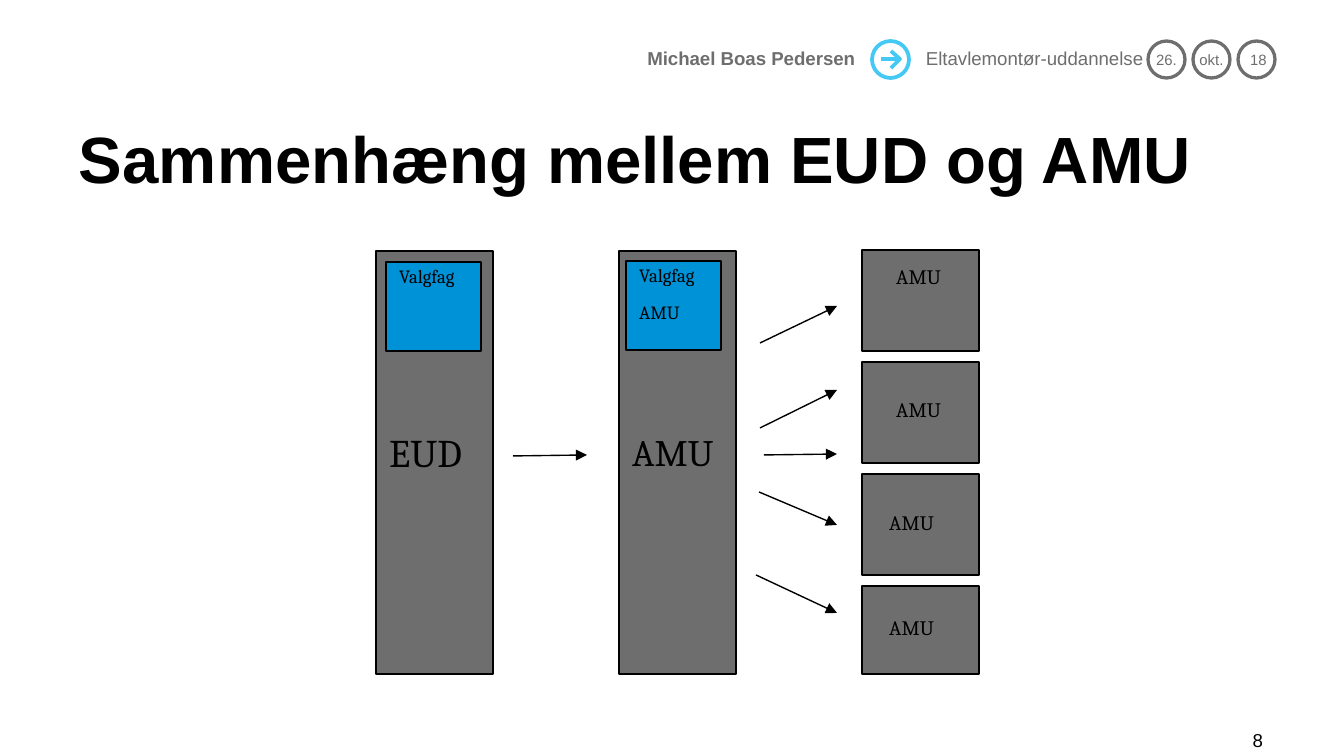
from dataclasses import dataclass

from pptx import Presentation
from pptx.dml.color import RGBColor
from pptx.enum.shapes import MSO_CONNECTOR, MSO_SHAPE
from pptx.enum.text import MSO_ANCHOR, MSO_AUTO_SIZE, PP_ALIGN
from pptx.oxml import parse_xml
from pptx.oxml.ns import nsdecls
from pptx.util import Pt

SCALE = 914400 / 134.4


@dataclass(frozen=True)
class Theme:
    """Colours, fonts and type sizes of the slide."""
    black: str = "000000"
    grey: str = "6E6E6E"
    blue: str = "0092D7"
    cyan: str = "44C8F4"
    sans: str = "Arial"
    serif: str = "Cambria"
    title: int = 35
    title_leading: int = 33
    stage: int = 20
    first_stage: int = 21
    course: int = 11
    small: int = 10
    date: int = 8
    outline: float = 0.75
    ring: float = 1.75
    icon: float = 2
    tight: float = 0.83


def emu(px):
    """Turn px into EMU."""
    return round(px * SCALE)


def assign(target, values):
    """Set every attribute named in values on target."""
    for name, value in values.items():
        setattr(target, name, value)


class Deck:
    """Holds the theme and the current slide and draws its elements."""

    def __init__(self, theme, slide):
        """Keep the theme and the slide."""
        self.theme = theme
        self.slide = slide

    def fill_text(self, frame, lines, size, family=None, color=None, bold=False,
                  align=PP_ALIGN.LEFT, anchor=MSO_ANCHOR.TOP, inset=None,
                  wrap=True, leading=None, gap=0):
        """Fill a text frame with one paragraph per line."""
        assign(frame, dict(word_wrap=wrap, auto_size=MSO_AUTO_SIZE.NONE,
                           vertical_anchor=anchor))
        if inset is not None:
            sides = ("margin_left", "margin_top", "margin_right", "margin_bottom")
            assign(frame, dict(zip(sides, map(emu, inset))))
        for index, line in enumerate(lines):
            paragraph = frame.add_paragraph() if index else frame.paragraphs[0]
            paragraph.text = line
            assign(paragraph, dict(alignment=align, line_spacing=leading,
                                   space_before=Pt(gap if index else 0)))
            assign(paragraph.font, dict(name=family or self.theme.serif,
                                        size=Pt(size), bold=bold))
            paragraph.font.color.rgb = RGBColor.from_string(color or self.theme.black)

    def title(self, box, text):
        """Place and format the title placeholder."""
        shape = self.slide.shapes.title
        assign(shape, dict(zip(("left", "top", "width", "height"), map(emu, box))))
        self.fill_text(shape.text_frame, [text], self.theme.title, self.theme.sans,
                       bold=True, anchor=MSO_ANCHOR.BOTTOM, inset=(0, 0, 0, 0),
                       leading=Pt(self.theme.title_leading))

    def label(self, box, text, size, **style):
        """Add a text box."""
        shape = self.slide.shapes.add_textbox(*map(emu, box))
        self.fill_text(shape.text_frame, [text], size, **style)

    def stroke(self, shape, color, width):
        """Set the outline of a shape and drop its shadow."""
        shape.shadow.inherit = False
        shape.line.color.rgb = RGBColor.from_string(color)
        shape.line.width = Pt(width)

    def block(self, box, fill):
        """Add a filled rectangle with a thin outline."""
        shape = self.slide.shapes.add_shape(MSO_SHAPE.RECTANGLE, *map(emu, box))
        shape.fill.solid()
        shape.fill.fore_color.rgb = RGBColor.from_string(fill)
        self.stroke(shape, self.theme.black, self.theme.outline)
        return shape

    def elective(self, box, lines):
        """Add a blue block with small text."""
        shape = self.block(box, self.theme.blue)
        self.fill_text(shape.text_frame, lines, self.theme.small,
                       leading=self.theme.tight, gap=self.theme.small)

    def ring(self, box, color, width):
        """Add an unfilled circle."""
        shape = self.slide.shapes.add_shape(MSO_SHAPE.OVAL, *map(emu, box))
        shape.fill.background()
        self.stroke(shape, color, width)
        return shape

    def connector(self, start, end, color, width, head=False):
        """Add a straight line, with an arrowhead at its end if head is set."""
        line = self.slide.shapes.add_connector(
            MSO_CONNECTOR.STRAIGHT, *map(emu, start + end))
        line.line.color.rgb = RGBColor.from_string(color)
        line.line.width = Pt(width)
        if head:
            line.line._get_or_add_ln().append(
                parse_xml(f'<a:tailEnd {nsdecls("a")} type="triangle"/>'))
        line._element.spPr.append(parse_xml(f'<a:effectLst {nsdecls("a")}/>'))

    def arrow_icon(self):
        """Add the ringed arrow of the header."""
        color, width = self.theme.cyan, self.theme.icon
        self.ring((872, 41, 37, 37), color, width)
        self.connector((881, 59), (900, 59), color, width)
        builder = self.slide.shapes.build_freeform(891, 51, SCALE)
        builder.add_line_segments([(900, 59), (891, 68)], close=False)
        chevron = builder.convert_to_shape()
        chevron.fill.background()
        self.stroke(chevron, color, width)

    def header(self):
        """Add the header row with author, course and date."""
        theme = self.theme
        style = dict(family=theme.sans, color=theme.grey, anchor=MSO_ANCHOR.MIDDLE)
        row = dict(style, inset=(0, 0, 0, 0), leading=theme.tight)
        self.label((301, 40, 554, 39), "Michael Boas Pedersen", theme.small,
                   bold=True, align=PP_ALIGN.RIGHT, **row)
        self.arrow_icon()
        self.label((926, 40, 218, 39), "Eltavlemontør-uddannelse", theme.small, **row)
        for index, (text, indent) in enumerate((("26.", 0), ("okt.", 0), ("18", 4))):
            shape = self.ring((1148 + 45 * index, 41, 37, 37), theme.grey, theme.ring)
            self.fill_text(shape.text_frame, [text], theme.date,
                           align=PP_ALIGN.CENTER, inset=(indent, 0, 0, 0),
                           wrap=False, **style)


def main():
    """Build and save the slide."""
    theme = Theme()
    presentation = Presentation()
    assign(presentation, dict(slide_width=emu(1344), slide_height=emu(756)))
    deck = Deck(theme, presentation.slides.add_slide(presentation.slide_layouts[5]))

    deck.header()
    deck.title((79, 99, 1184, 98), "Sammenhæng mellem EUD og AMU")
    deck.label((950, 724, 313, 32), "8", theme.small, family=theme.sans,
               align=PP_ALIGN.RIGHT, anchor=MSO_ANCHOR.MIDDLE, inset=(0, 0, 0, 0))

    stages = (
        (376, "EUD", theme.first_stage, (386, 262), ["Valgfag"]),
        (619, "AMU", theme.stage, (626, 261), ["Valgfag", "AMU"]),
    )
    for left, name, size, corner, lines in stages:
        deck.block((left, 251, 117, 423), theme.grey)
        deck.elective((*corner, 95, 89), lines)
        deck.label((left, 430, 126, 52), name, size, leading=theme.tight)

    courses = ((101, 883, 262), (101, 883, 395), (101, 876, 508), (88, 876, 613))
    for index, (height, left, top) in enumerate(courses):
        deck.block((862, 250 + 112 * index, 117, height), theme.grey)
        deck.label((left, top, 95, 34), "AMU", theme.course, leading=theme.tight)

    arrows = (
        ((513, 456), (587, 455)),
        ((760, 343), (837, 306)),
        ((760, 428), (837, 390)),
        ((764, 455), (837, 454)),
        ((759, 492), (837, 525)),
        ((756, 575), (837, 613)),
    )
    for start, end in arrows:
        deck.connector(start, end, theme.black, theme.outline, head=True)

    presentation.save("out.pptx")


if __name__ == "__main__":
    main()
